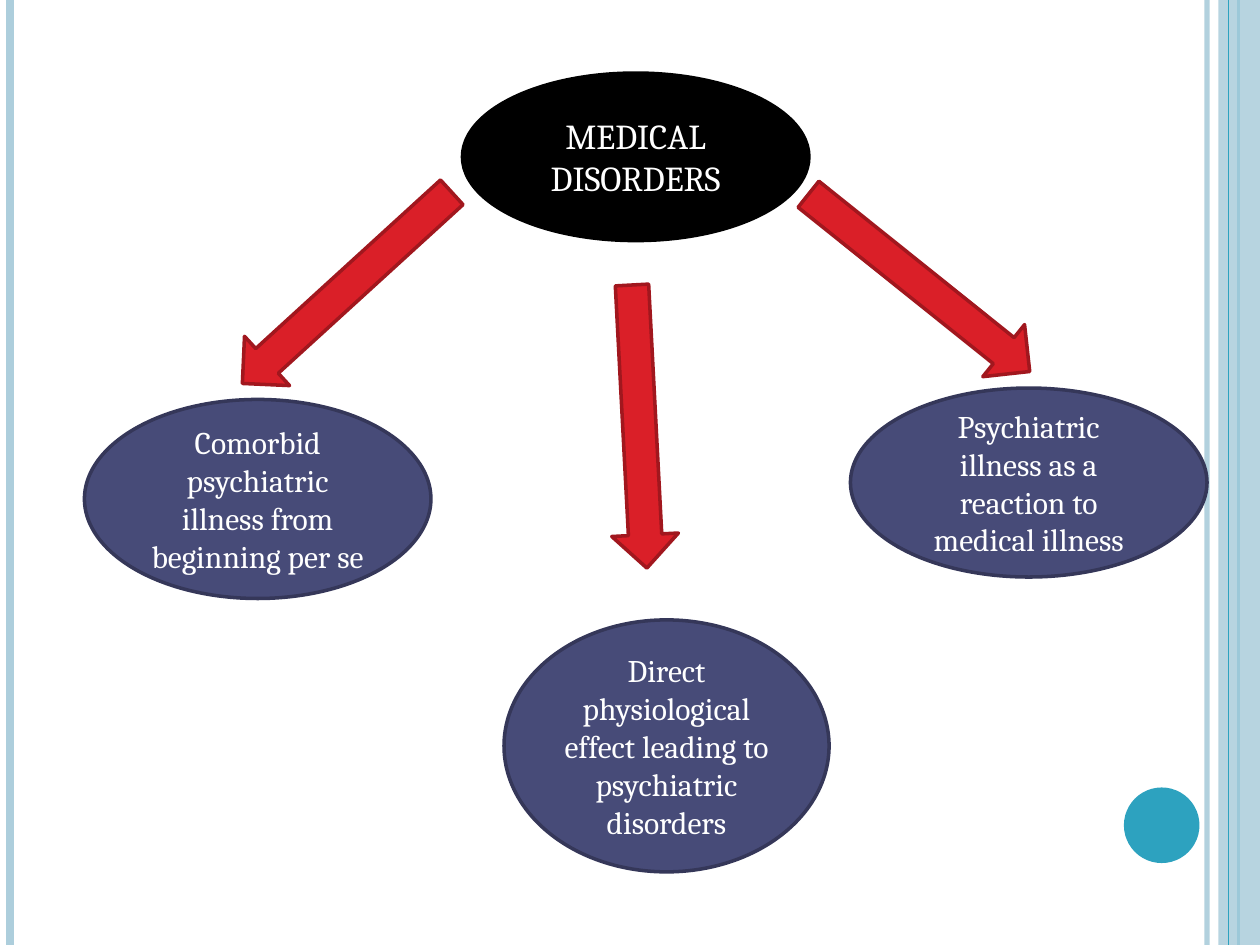
from lxml import etree
from pptx import Presentation
from pptx.dml.color import RGBColor
from pptx.enum import shapes, text
from pptx.oxml.ns import qn
from pptx.util import Inches, Pt

THEME = {
    "font": "Cambria", "text": "FFFFFF", "outline": 2,
    "pale": "ADCEDC", "accent": "2DA2BF",
    "root": {"fill": "000000", "line": "000000", "size": 20},
    "branch": {"fill": "474B78", "line": "353759", "size": 18},
    "arrow": {"fill": "DA1F28", "line": "A1171E"},
}
SLIDE_WIDTH, SLIDE_HEIGHT = 10, 7.5

# x, colour, width in points, opacity in percent
RULES_BEHIND_BAND = [
    (9.58, "pale", 3, 93),
    (0.08, "pale", 4.5, 100),
    (9.83, "accent", 1.5, 100),
]
RULE_ON_BAND = (9.75, "accent", 0.75, 100)
BAND = (9.67, 0, 0.33, SLIDE_HEIGHT)
BAND_OPACITY = 87
DOT = (8.92, 6.25, 0.6, 0.6)

# wording, style, (left, top, width, height)
BUBBLES = [
    ("MEDICAL DISORDERS", "root", (3.67, 0.58, 2.75, 1.33)),
    ("Direct physiological effect leading to psychiatric disorders",
     "branch", (4, 4.92, 2.58, 2)),
    ("Psychiatric illness as a reaction to medical illness",
     "branch", (6.75, 3.08, 2.83, 1.5)),
    ("Comorbid psychiatric illness from beginning per se",
     "branch", (0.67, 3.17, 2.75, 1.58)),
]
ARROW_SIZE = (0.53, 2.25)
# left, top, rotation
ARROWS = [(4.81, 2.26, 357), (7.03, 1.12, 308.7), (2.49, 1.16, 47.6)]


def set_opacity(properties, percent):
    """Apply opacity to the first solid colour below the given element."""
    colour = next(properties.iter(qn("a:srgbClr")))
    etree.SubElement(colour, qn("a:alpha"), val=str(percent * 1000))


def add_rule(slide, x, colour, width, opacity):
    rule = slide.shapes.add_connector(
        shapes.MSO_CONNECTOR.STRAIGHT,
        Inches(x), 0, Inches(x), Inches(SLIDE_HEIGHT))
    rule.line.color.rgb = RGBColor.from_string(THEME[colour])
    rule.line.width = Pt(width)
    properties = rule._element.spPr
    if opacity < 100:
        set_opacity(properties, opacity)
    etree.SubElement(properties, qn("a:effectLst"))


def add_filled(slide, kind, box, fill, line=None):
    shape = slide.shapes.add_shape(kind, *map(Inches, box))
    shape.shadow.inherit = False
    shape.fill.solid()
    shape.fill.fore_color.rgb = RGBColor.from_string(fill)
    if line:
        shape.line.color.rgb = RGBColor.from_string(line)
        shape.line.width = Pt(THEME["outline"])
    else:
        shape.line.fill.background()
    return shape


def add_bubble(slide, wording, style, box):
    look = THEME[style]
    bubble = add_filled(slide, shapes.MSO_SHAPE.OVAL, box,
                        look["fill"], look["line"])
    frame = bubble.text_frame
    frame.word_wrap = True
    frame.vertical_anchor = text.MSO_ANCHOR.MIDDLE
    frame.text = wording
    paragraph = frame.paragraphs[0]
    paragraph.alignment = text.PP_ALIGN.CENTER
    paragraph.font.name = THEME["font"]
    paragraph.font.size = Pt(look["size"])
    paragraph.font.color.rgb = RGBColor.from_string(THEME["text"])


def add_frame(slide):
    """Draw the side rules, the right band and the dot."""
    for rule in RULES_BEHIND_BAND:
        add_rule(slide, *rule)
    band = add_filled(slide, shapes.MSO_SHAPE.RECTANGLE, BAND, THEME["pale"])
    set_opacity(band._element.spPr, BAND_OPACITY)
    add_rule(slide, *RULE_ON_BAND)
    add_filled(slide, shapes.MSO_SHAPE.OVAL, DOT, THEME["accent"])


def main():
    presentation = Presentation()
    presentation.slide_width = Inches(SLIDE_WIDTH)
    presentation.slide_height = Inches(SLIDE_HEIGHT)
    slide = presentation.slides.add_slide(presentation.slide_layouts[6])
    add_frame(slide)
    for bubble in BUBBLES:
        add_bubble(slide, *bubble)
    for left, top, rotation in ARROWS:
        arrow = add_filled(slide, shapes.MSO_SHAPE.DOWN_ARROW,
                           (left, top, *ARROW_SIZE), **THEME["arrow"])
        arrow.rotation = rotation
    presentation.save("out.pptx")


if __name__ == "__main__":
    main()
